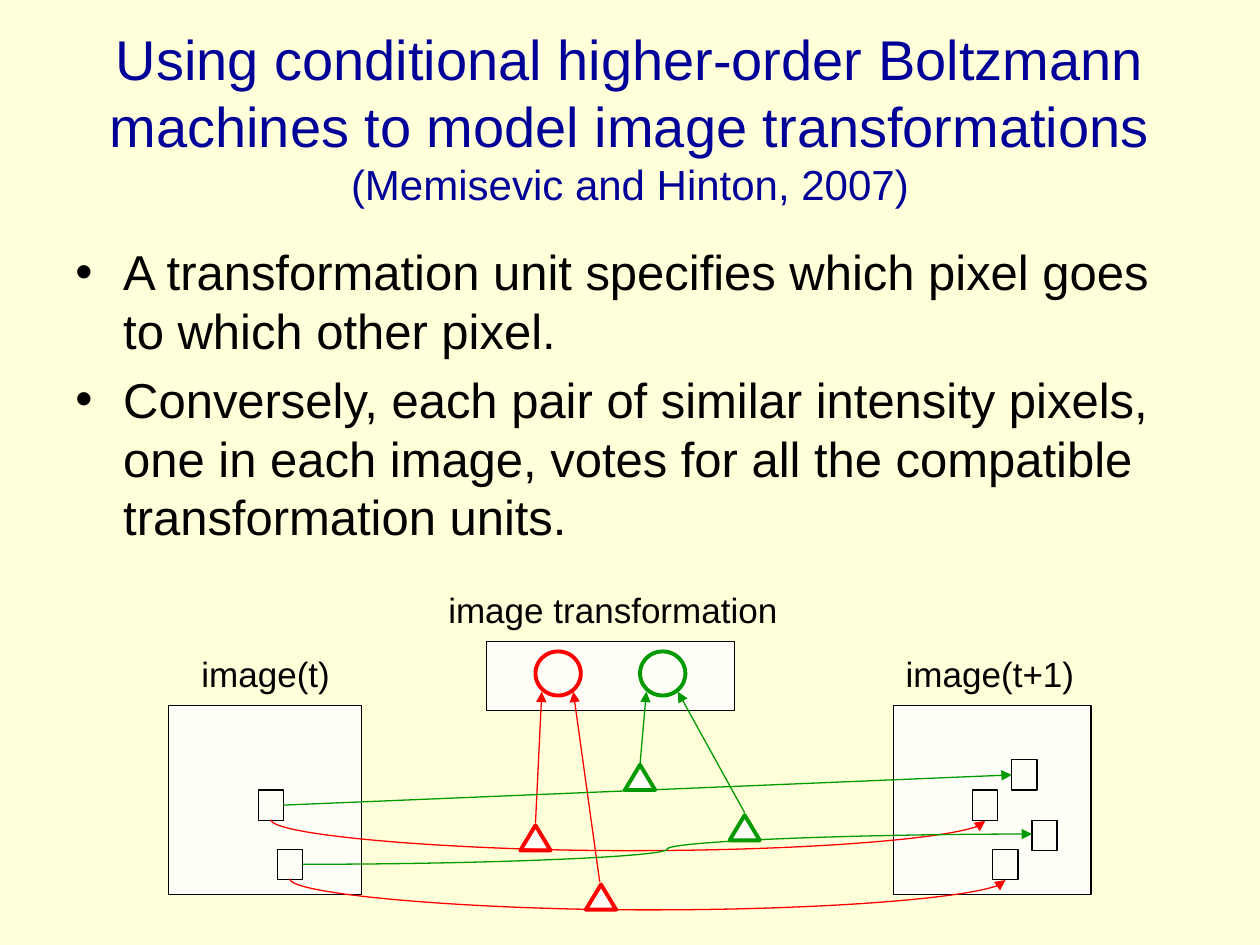
from typing import NamedTuple

from lxml import etree
from pptx import Presentation
from pptx.dml.color import RGBColor
from pptx.enum.shapes import MSO_CONNECTOR, MSO_SHAPE
from pptx.enum.text import MSO_ANCHOR, PP_ALIGN
from pptx.oxml.ns import qn
from pptx.util import Inches, Pt

STRAIGHT, CURVE = MSO_CONNECTOR.STRAIGHT, MSO_CONNECTOR.CURVE
RECTANGLE = MSO_SHAPE.RECTANGLE
OVAL = MSO_SHAPE.OVAL
TRIANGLE = MSO_SHAPE.ISOSCELES_TRIANGLE
MIDDLE = MSO_ANCHOR.MIDDLE
CENTER, LEFT = PP_ALIGN.CENTER, PP_ALIGN.LEFT
LEFT_SIDE, RIGHT_SIDE = 1, 3

CREAM = RGBColor(0xFF, 0xFF, 0xD9)
IVORY = RGBColor(0xFF, 0xFF, 0xF7)
NAVY = RGBColor(0x00, 0x00, 0x99)
BLACK = RGBColor(0x00, 0x00, 0x00)
RED = RGBColor(0xFF, 0x00, 0x00)
GREEN = RGBColor(0x00, 0x99, 0x00)
FONT = "Arial"
THIN, THICK = 0.75, 2.25
PIXEL_WIDTH, PIXEL_HEIGHT = 0.2, 0.24
SAG_WIDTH, SAG_DEPTH = 0.01, 0.25


class Area(NamedTuple):
    left: float
    top: float
    width: float
    height: float


class Point(NamedTuple):
    x: float
    y: float


class Label(NamedTuple):
    text: str
    area: Area


class Vote(NamedTuple):
    factor: Point
    start: Point
    end: Point
    color: RGBColor


FRAMES = [
    Area(1.34, 5.6, 1.53, 1.5),
    Area(7.09, 5.6, 1.57, 1.5),
    Area(3.86, 5.09, 1.97, 0.55),
]
LABELS = [
    Label("image(t)", Area(1.5, 5.13, 1.46, 0.43)),
    Label("image(t+1)", Area(7.09, 5.13, 1.57, 0.43)),
    Label("image transformation", Area(3.46, 4.62, 2.84, 0.43)),
]
UNITS = [(Point(4.25, 5.17), RED), (Point(5.08, 5.17), GREEN)]
SOURCES = [Point(2.05, 6.27), Point(2.2, 6.74)]
RED_TARGETS = [Point(7.72, 6.27), Point(7.88, 6.74)]
GREEN_TARGETS = [Point(8.03, 6.03), Point(8.19, 6.51)]
VOTES = [
    Vote(Point(4.13, 6.55), Point(4.25, 6.53), Point(4.3, 5.49), RED),
    Vote(Point(4.65, 7.02), Point(4.76, 7), Point(4.55, 5.49), RED),
    Vote(Point(4.96, 6.07), Point(5.08, 6.06), Point(5.13, 5.49), GREEN),
    Vote(Point(5.79, 6.47), Point(5.91, 6.45), Point(5.38, 5.49), GREEN),
]
BULLETS = [
    "A transformation unit specifies which pixel goes to which other pixel.",
    "Conversely, each pair of similar intensity pixels, one in each image, "
    "votes for all the compatible transformation units.",
]


def add_box(page, area: Area):
    box = page.shapes.add_textbox(*map(Inches, area))
    box.text_frame.word_wrap = True
    return box.text_frame


def add_span(para, text: str, size: float, color: RGBColor) -> None:
    span = para.add_run()
    span.text = text
    span.font.name = FONT
    span.font.size = Pt(size)
    span.font.color.rgb = color


def add_bullet(para) -> None:
    properties = para._p.get_or_add_pPr()
    properties.set("marL", str(Inches(0.38)))
    properties.set("indent", str(Inches(-0.38)))
    etree.SubElement(properties, qn("a:buFont"), typeface=FONT)
    etree.SubElement(properties, qn("a:buChar"), char="•")


def add_figure(page, kind, area: Area, color: RGBColor, weight: float):
    figure = page.shapes.add_shape(kind, *map(Inches, area))
    figure.shadow.inherit = False
    figure.fill.solid()
    figure.fill.fore_color.rgb = IVORY
    figure.line.color.rgb = color
    figure.line.width = Pt(weight)
    return figure


def add_pixel(page, corner: Point):
    area = Area(corner.x, corner.y, PIXEL_WIDTH, PIXEL_HEIGHT)
    return add_figure(page, RECTANGLE, area, BLACK, THIN)


def add_arrow(page, kind, start: Point, end: Point, color: RGBColor):
    arrow = page.shapes.add_connector(kind, *map(Inches, (*start, *end)))
    arrow.line.color.rgb = color
    arrow.line.width = Pt(THIN)
    etree.SubElement(arrow.line._get_or_add_ln(), qn("a:tailEnd"), type="triangle")
    etree.SubElement(arrow._element.spPr, qn("a:effectLst"))
    return arrow


def add_sagging_arrow(page, source: Point, target: Point, color: RGBColor) -> None:
    start = Point(source.x + PIXEL_WIDTH / 2, source.y + PIXEL_HEIGHT)
    end = Point(target.x + PIXEL_WIDTH / 2, target.y + PIXEL_HEIGHT)
    span = end.x - start.x
    center = (start.x + end.x) / 2
    upper = Point(center + SAG_WIDTH / 2, start.y - span / 2)
    lower = Point(center - SAG_WIDTH / 2, start.y + span / 2)
    arrow = add_arrow(page, CURVE, upper, lower, color)
    properties = arrow._element.spPr
    properties.find(qn("a:xfrm")).set("rot", str(270 * 60000))
    guides = properties.find(qn("a:prstGeom")).find(qn("a:avLst"))
    ratio = round(SAG_DEPTH / SAG_WIDTH * 100000)
    etree.SubElement(guides, qn("a:gd"), name="adj1", fmla=f"val {ratio}")


def add_headings(page) -> None:
    title = add_box(page, Area(0.5, 0.3, 9, 1.25))
    title.vertical_anchor = MIDDLE
    para = title.paragraphs[0]
    para.alignment = CENTER
    add_span(para, "Using conditional higher-order Boltzmann machines "
                   "to model image transformations ", 32, NAVY)
    add_span(para, "(Memisevic and Hinton, 2007)", 24, NAVY)

    body = add_box(page, Area(0.5, 1.87, 9, 2.79))
    for index, text in enumerate(BULLETS):
        para = body.add_paragraph() if index else body.paragraphs[0]
        para.space_before = Pt(5.6)
        add_bullet(para)
        add_span(para, text, 28, BLACK)


def add_diagram(page) -> None:
    for frame in FRAMES:
        add_figure(page, RECTANGLE, frame, BLACK, THIN)
    for corner, color in UNITS:
        add_figure(page, OVAL, Area(*corner, 0.36, 0.35), color, THICK)
    sources = [add_pixel(page, corner) for corner in SOURCES]
    for corner in RED_TARGETS:
        add_pixel(page, corner)
    green_targets = [add_pixel(page, corner) for corner in GREEN_TARGETS]
    for vote in VOTES:
        add_arrow(page, STRAIGHT, vote.start, vote.end, vote.color)
        add_figure(page, TRIANGLE, Area(*vote.factor, 0.24, 0.2), vote.color, THICK)
    for label in LABELS:
        para = add_box(page, label.area).paragraphs[0]
        para.alignment = LEFT
        add_span(para, label.text, 20, BLACK)

    straight = add_arrow(page, STRAIGHT, Point(2.25, 6.39), Point(8.03, 6.15), GREEN)
    straight.begin_connect(sources[0], RIGHT_SIDE)
    straight.end_connect(green_targets[0], LEFT_SIDE)
    for source, target in zip(SOURCES, RED_TARGETS):
        add_sagging_arrow(page, source, target, RED)
    add_arrow(page, CURVE, Point(2.4, 6.86), Point(8.19, 6.62), GREEN)


def main() -> None:
    deck = Presentation()
    deck.slide_width, deck.slide_height = Inches(10), Inches(7.5)
    page = deck.slides.add_slide(deck.slide_layouts[6])
    page.background.fill.solid()
    page.background.fill.fore_color.rgb = CREAM
    add_headings(page)
    add_diagram(page)
    deck.save("out.pptx")


if __name__ == "__main__":
    main()
